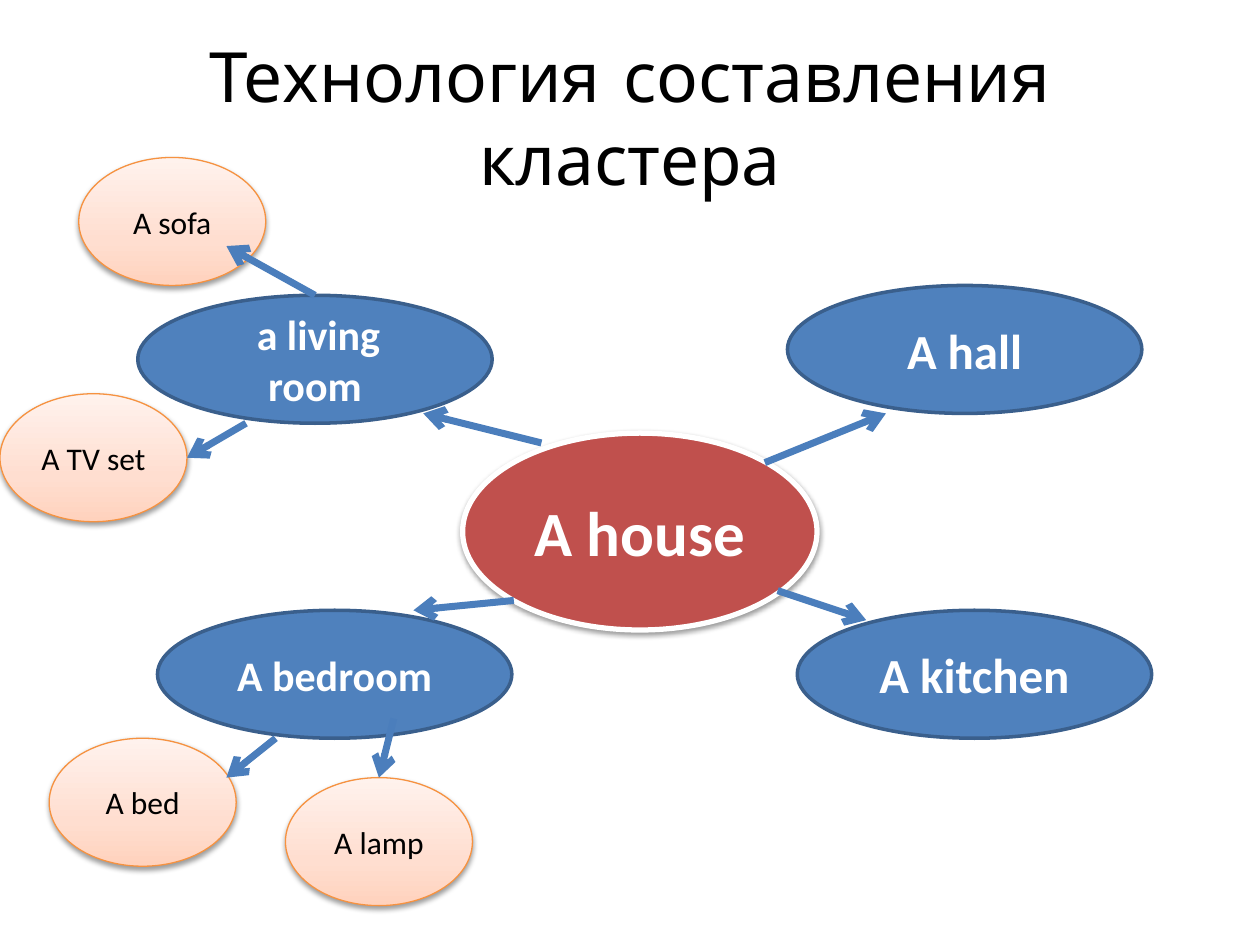
from lxml import etree
from pptx import Presentation, util as u
from pptx.dml.color import RGBColor
from pptx.enum import shapes, text
from pptx.oxml import parse_xml
from pptx.oxml.ns import qn

HUES = {"ink": "000000", "white": "FFFFFF", "red": "C0504D", "blue": "4F81BD",
        "edge": "3A5F8C", "arrow": "4B7EBC", "orange": "F69240"}
PEACH = [(0, "FFD2BD"), (35, "FFDED0"), (100, "FFF2ED")]
NS = 'xmlns:a="http://schemas.openxmlformats.org/drawingml/2006/main"'

deck = Presentation()
deck.slide_width, deck.slide_height = u.Inches(10), u.Inches(7.5)
slide = deck.slides.add_slide(deck.slide_layouts[5])
CELL = deck.slide_width / 128  # grid of 128 columns by 96 rows


def grid(*cells):
    return [round(n * CELL) for n in cells]


def style(run, size, hue, bold=False, face="Calibri"):
    run.font.size, run.font.bold, run.font.name = u.Pt(size), bold, face
    run.font.color.rgb = RGBColor.from_string(HUES[hue])


# Title
title = slide.shapes.title
title.left, title.top = u.Inches(0.5), u.Inches(0.3)
title.width, title.height = u.Inches(9), u.Inches(1.25)
title.text_frame.text = "Технология составления кластера"
title.text_frame.vertical_anchor = text.MSO_ANCHOR.MIDDLE
head = title.text_frame.paragraphs[0]
head.alignment = text.PP_ALIGN.CENTER
style(head.runs[0], 39.6, "ink", face="Comic Neue")

# Kinds of bubble: columns, rows, fill, line, line width, text hue, bold, shadow
KINDS = {"core": (36, 20, "red", "white", 3, "white", True, True),
         "room": (36, 13, "blue", "edge", 2, "white", True, False),
         "item": (19, 13, None, "orange", 0.75, "ink", False, True)}

# Bubbles: kind, column, row, label, text size
BUBBLES = [("core", 47, 44, "A house", 36),
           ("room", 14, 30, "a living room", 24),
           ("item", 29, 79, "A lamp", 18),
           ("item", 8, 16, "A sofa", 18),
           ("item", 0, 40, "A TV set", 18),
           ("room", 16, 62, "A bedroom", 24),
           ("room", 81, 62, "A kitchen", 28),
           ("room", 80, 29, "A hall", 28),
           ("item", 5, 75, "A bed", 18)]

for kind, col, row, label, size in BUBBLES:
    wide, high, fill, edge, thick, hue, bold, shade = KINDS[kind]
    oval = slide.shapes.add_shape(shapes.MSO_SHAPE.OVAL, *grid(col, row, wide, high))
    oval.shadow.inherit = False
    oval.line.color.rgb = RGBColor.from_string(HUES[edge])
    oval.line.width = u.Pt(thick)
    props = oval._element.spPr
    if fill:
        oval.fill.solid()
        oval.fill.fore_color.rgb = RGBColor.from_string(HUES[fill])
    else:
        oval.fill.gradient()
        stops = "".join(f'<a:gs pos="{pos * 1000}"><a:srgbClr val="{tint}"/></a:gs>'
                        for pos, tint in PEACH)
        props.replace(props.find(qn("a:gradFill")), parse_xml(
            f'<a:gradFill {NS} rotWithShape="1"><a:gsLst>{stops}</a:gsLst>'
            '<a:lin ang="16200000" scaled="0"/></a:gradFill>'))
    if shade:
        props.find(qn("a:effectLst")).append(parse_xml(
            f'<a:outerShdw {NS} blurRad="{u.Pt(3.1)}" dist="{u.Pt(1.6)}" '
            'dir="5400000" rotWithShape="0"><a:srgbClr val="000000">'
            '<a:alpha val="38000"/></a:srgbClr></a:outerShdw>'))
    frame = oval.text_frame
    frame.word_wrap = True
    frame.vertical_anchor = text.MSO_ANCHOR.MIDDLE
    para = frame.paragraphs[0]
    para.alignment = text.PP_ALIGN.CENTER
    if label == "a living room":  # small lead-in space
        lead = para.add_run()
        lead.text = " "
        style(lead, 18, hue)
    run = para.add_run()
    run.text = label
    style(run, size, hue, bold)

# Arrows: from column, row to column, row
ARROWS = [(77.7, 47, 90, 42), (79, 60, 88, 63), (52.2, 61, 42, 62), (55, 45, 43, 42),
          (28, 75, 23, 79), (40, 73, 38.5, 79), (25, 43, 19, 46.5), (32, 30, 23, 25)]

for ends in ARROWS:
    link = slide.shapes.add_connector(shapes.MSO_CONNECTOR.STRAIGHT, *grid(*ends))
    link.line.color.rgb = RGBColor.from_string(HUES["arrow"])
    link.line.width = u.Pt(4)
    etree.SubElement(link.line._get_or_add_ln(), qn("a:tailEnd"), type="arrow")
    etree.SubElement(link._element.spPr, qn("a:effectLst"))

deck.save("out.pptx")
